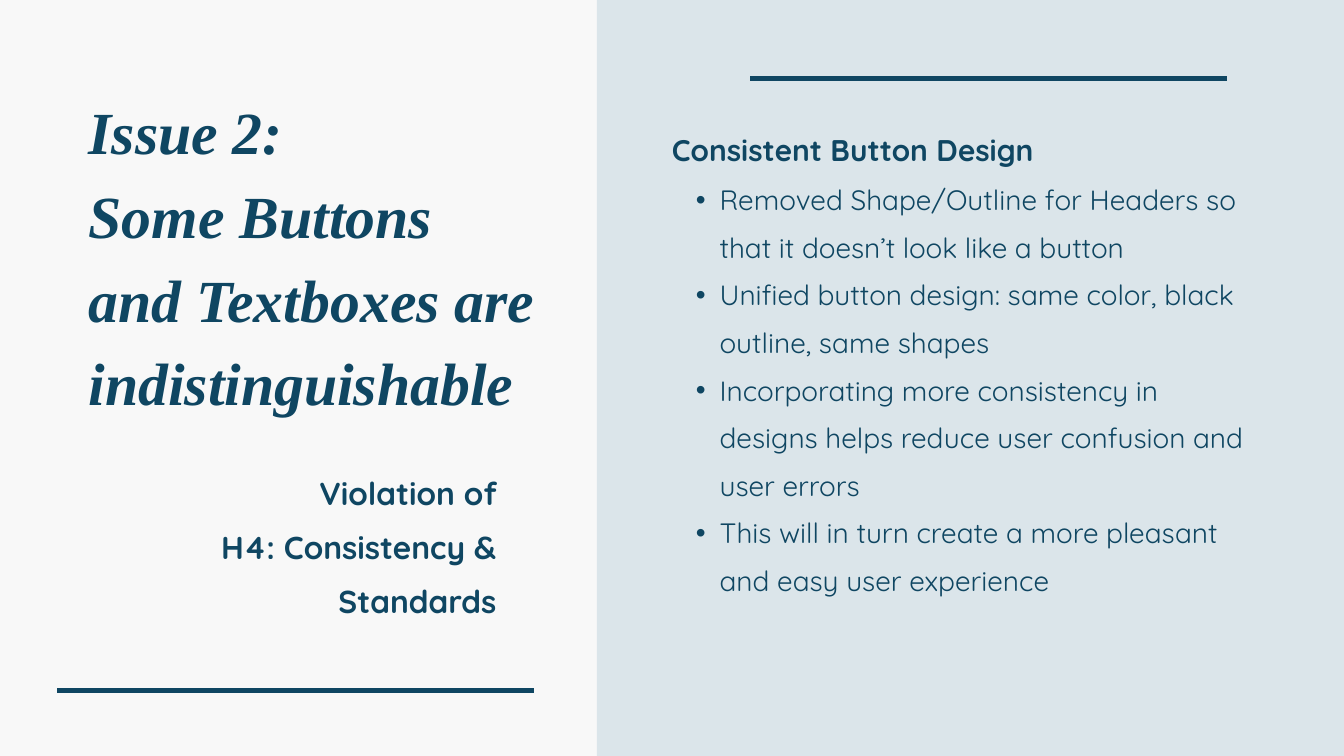
from dataclasses import dataclass

from lxml.etree import SubElement
from pptx import Presentation
from pptx.dml.color import RGBColor
from pptx.enum.shapes import MSO_CONNECTOR, MSO_SHAPE
from pptx.enum.text import MSO_ANCHOR, MSO_AUTO_SIZE, PP_ALIGN
from pptx.oxml.ns import qn
from pptx.util import Cm, Pt

NAVY = RGBColor(0x0F, 0x46, 0x62)
PALE_BLUE = RGBColor(0xDB, 0xE5, 0xEA)
OFF_WHITE = RGBColor(0xF8, 0xF8, 0xF8)

PAGE_WIDTH, PAGE_HEIGHT = 50.8, 28.58
PANEL_LEFT = 22.56
RULE_LENGTH = 18.03
LINE_SPACING = 1.7  # line height for each point of body text


@dataclass
class TextBlock:
    left: float
    top: float
    width: float
    height: float
    lines: list[str]
    size: float
    line_height: float
    font: str = "Quicksand"
    bold: bool = True
    italic: bool = False
    align: PP_ALIGN = PP_ALIGN.LEFT
    bulleted: bool = False


@dataclass
class Rule:
    left: float
    top: float


TITLE = TextBlock(
    3.35, 3.15, 16.85, 12.47,
    ["Issue 2:", "Some Buttons and Textboxes are indistinguishable"],
    64, 89.6, font="Times New Roman", italic=True,
)
CHANGES = TextBlock(
    25.4, 6.38, 22.38, 16.08,
    [
        "Removed Shape/Outline for Headers so that it doesn’t look like a button",
        "Unified button design: same color, black outline, same shapes",
        "Incorporating more consistency in designs helps reduce user confusion and user errors",
        "This will in turn create a more pleasant and easy user experience",
    ],
    30, 30 * LINE_SPACING, bold=False, bulleted=True,
)
HEADING = TextBlock(
    25.4, 4.42, 23.9, 1.73, ["Consistent Button Design"], 32, 32 * LINE_SPACING
)
VIOLATION = TextBlock(
    3.58, 17.3, 15.19, 5.97,
    ["Violation of", "H4: Consistency & Standards"],
    34, 34 * LINE_SPACING, align=PP_ALIGN.RIGHT,
)
RULES = [Rule(2.16, 26.11), Rule(28.35, 2.97)]


def apply_format(target, values: dict) -> None:
    for name, value in values.items():
        setattr(target, name, value)


def set_bullet(para, bulleted: bool) -> None:
    properties = para._p.get_or_add_pPr()
    properties.set("marL", str(Cm(1.8) if bulleted else 0))
    properties.set("indent", str(Cm(-0.9) if bulleted else 0))
    if bulleted:
        SubElement(properties, qn("a:buFont"), typeface="Arial")
        SubElement(properties, qn("a:buChar"), char="•")
    else:
        SubElement(properties, qn("a:buNone"))


def fill_text(box, block: TextBlock) -> None:
    apply_format(box, {
        "left": Cm(block.left), "top": Cm(block.top),
        "width": Cm(block.width), "height": Cm(block.height),
    })
    frame = box.text_frame
    apply_format(frame, {
        "margin_left": 0, "margin_top": 0, "margin_right": 0, "margin_bottom": 0,
        "word_wrap": True, "auto_size": MSO_AUTO_SIZE.NONE,
        "vertical_anchor": MSO_ANCHOR.TOP,
    })
    for index, line in enumerate(block.lines):
        para = frame.add_paragraph() if index else frame.paragraphs[0]
        apply_format(para, {
            "alignment": block.align, "line_spacing": Pt(block.line_height),
            "space_before": Pt(0), "space_after": Pt(0),
        })
        set_bullet(para, block.bulleted)
        span = para.add_run()
        span.text = line
        apply_format(span.font, {
            "name": block.font, "size": Pt(block.size),
            "bold": block.bold, "italic": block.italic,
        })
        span.font.color.rgb = NAVY


def add_panel(page) -> None:
    """Fill the right side of the page, behind all text."""
    panel = page.shapes.add_shape(
        MSO_SHAPE.RECTANGLE, Cm(PANEL_LEFT), 0,
        Cm(PAGE_WIDTH - PANEL_LEFT), Cm(PAGE_HEIGHT),
    )
    panel.shadow.inherit = False
    panel.fill.solid()
    panel.fill.fore_color.rgb = PALE_BLUE
    panel.line.fill.background()
    page.shapes.title.element.addprevious(panel.element)


def add_rule(page, rule: Rule) -> None:
    line = page.shapes.add_connector(
        MSO_CONNECTOR.STRAIGHT, Cm(rule.left), Cm(rule.top),
        Cm(rule.left + RULE_LENGTH), Cm(rule.top),
    )
    line.line.color.rgb = NAVY
    line.line.width = Pt(6)
    SubElement(line.element.spPr, qn("a:effectLst"))


def main() -> None:
    deck = Presentation()
    deck.slide_width, deck.slide_height = Cm(PAGE_WIDTH), Cm(PAGE_HEIGHT)
    page = deck.slides.add_slide(deck.slide_layouts.get_by_name("Title and Content"))
    page.background.fill.solid()
    page.background.fill.fore_color.rgb = OFF_WHITE

    add_panel(page)
    for rule in RULES:
        add_rule(page, rule)
    fill_text(page.shapes.title, TITLE)
    fill_text(page.placeholders[1], CHANGES)
    for block in (HEADING, VIOLATION):
        fill_text(page.shapes.add_textbox(0, 0, 0, 0), block)

    deck.save("out.pptx")


if __name__ == "__main__":
    main()
